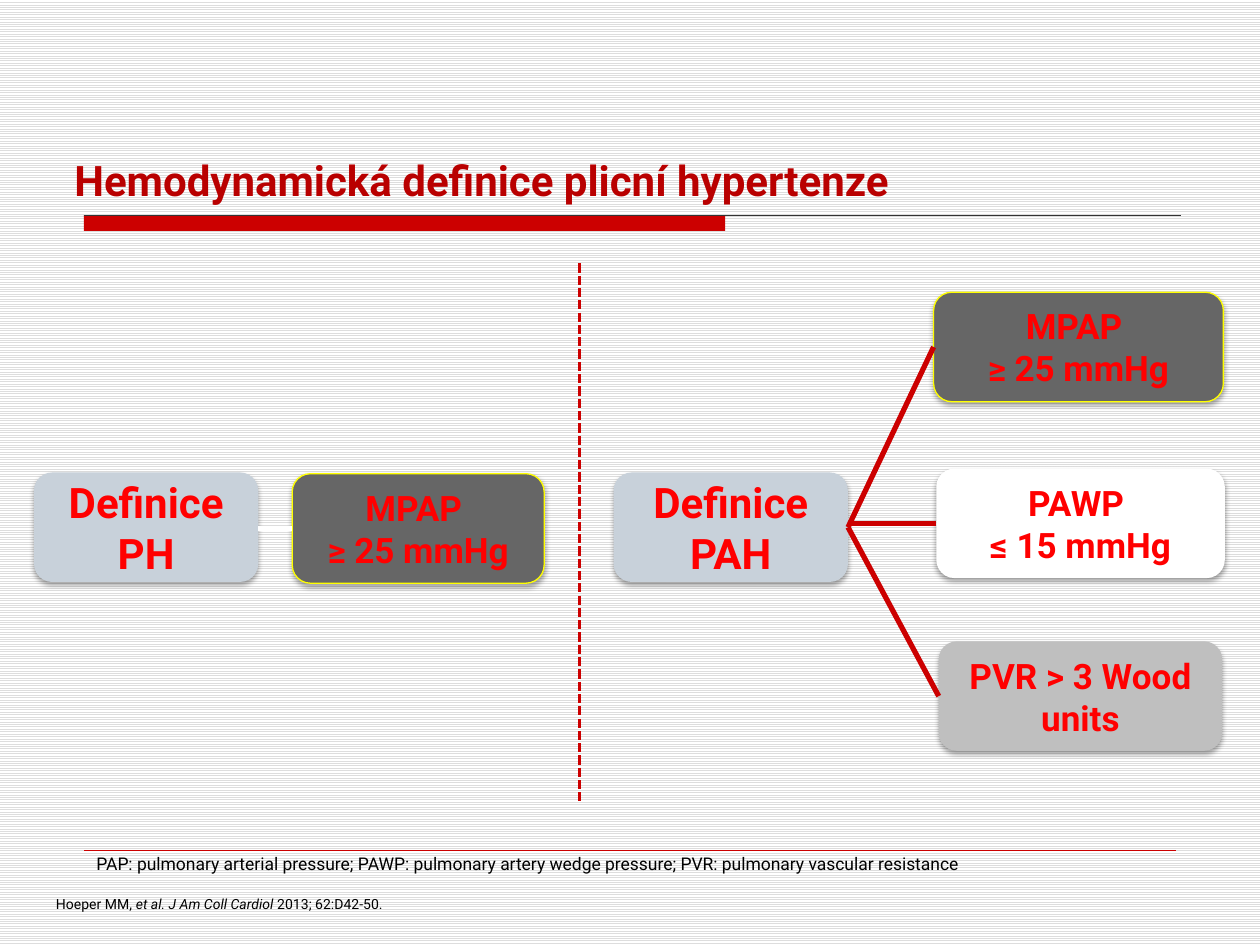
from lxml.etree import SubElement
from pptx import Presentation
from pptx.dml.color import RGBColor
from pptx.enum.dml import MSO_LINE, MSO_PATTERN
from pptx.enum.shapes import MSO_CONNECTOR, MSO_SHAPE
from pptx.enum.text import MSO_ANCHOR, MSO_AUTO_SIZE, PP_ALIGN
from pptx.oxml.ns import qn
from pptx.util import Pt

# Content
FONT = "Roboto"
RED, TEXT_RED, YELLOW = "CC0000", "FF0000", "FFFF00"
TITLE = "Hemodynamická definice plicní hypertenze"
ABBREVIATIONS = ("PAP: pulmonary arterial pressure; PAWP: pulmonary artery wedge "
                 "pressure; PVR: pulmonary vascular resistance")
# Citation runs: text, italic
CITATION = [("Hoeper MM, ", False), ("et al. J Am Coll Cardiol ", True),
            ("2013; 62:D42-50.", False)]

BOX_HEIGHT = 62.6
ROUND, PROCESS = MSO_SHAPE.ROUNDED_RECTANGLE, MSO_SHAPE.FLOWCHART_ALTERNATE_PROCESS
# name: text, preset, left, top, width, fill, outline, size, inset
BOXES = {
    "PH": ("Definice PH", ROUND, 19.4, 270, 128.2, "C8D1DA", None, 24, 0),
    "PH pressure": ("MPAP \v≥ 25 mmHg", PROCESS, 167, 270.7, 144, "666666", YELLOW, 20, 7.2),
    "PAH": ("Definice PAH", ROUND, 350.6, 270, 134, "C8D1DA", None, 24, 0),
    "PAH pressure": ("MPAP \v≥ 25 mmHg", PROCESS, 533.5, 167, 165.6, "666666", YELLOW, 20, 7.2),
    "Wedge": ("PAWP \v≤ 15 mmHg", PROCESS, 535, 267.8, 164.9, "FFFFFF", None, 20, 7.2),
    "Resistance": ("PVR > 3 Wood units", PROCESS, 536.4, 366.5, 162, "BFBFBF", None, 20, 7.2),
}
# from, to, colour, kept level with the target
LINKS = [
    ("PH", "PH pressure", "FFFFFF", True),
    ("PAH", "PAH pressure", RED, False),
    ("PAH", "Wedge", RED, True),
    ("PAH", "Resistance", RED, False),
]


def color(value):
    return RGBColor.from_string(value)


def style(font, size, value, bold=False):
    font.name, font.size, font.bold = FONT, Pt(size), bold
    font.color.rgb = color(value)


def add_line(x1, y1, x2, y2, value, weight):
    line = slide.shapes.add_connector(MSO_CONNECTOR.STRAIGHT, Pt(x1), Pt(y1), Pt(x2), Pt(y2))
    line.line.color.rgb = color(value)
    line.line.width = Pt(weight)
    SubElement(line._element.spPr, qn("a:effectLst"))
    return line


def add_shadow(shape):
    effects = SubElement(shape._element.spPr, qn("a:effectLst"))
    shadow = SubElement(effects, qn("a:outerShdw"), blurRad=str(Pt(3.1)),
                        dist=str(Pt(1.8)), dir="5400000", rotWithShape="0")
    black = SubElement(shadow, qn("a:srgbClr"), val="000000")
    SubElement(black, qn("a:alpha"), val="35000")


def add_box(text, preset, left, top, width, fill, outline, size, inset):
    box = slide.shapes.add_shape(preset, Pt(left), Pt(top), Pt(width), Pt(BOX_HEIGHT))
    box.fill.solid()
    box.fill.fore_color.rgb = color(fill)
    if outline:
        box.line.color.rgb = color(outline)
        box.line.width = Pt(0.75)
    else:
        box.line.fill.background()
    add_shadow(box)
    frame = box.text_frame
    frame.word_wrap = True
    frame.vertical_anchor = MSO_ANCHOR.MIDDLE
    frame.margin_left = frame.margin_right = Pt(inset)
    frame.margin_top = frame.margin_bottom = 0
    para = frame.paragraphs[0]
    para.text = text
    para.alignment = PP_ALIGN.CENTER
    style(para.font, size, TEXT_RED, bold=True)
    return box


def add_text(left, top, width, height, wrap):
    box = slide.shapes.add_textbox(Pt(left), Pt(top), Pt(width), Pt(height))
    box.text_frame.word_wrap = wrap
    return box.text_frame.paragraphs[0]


# Page and striped background
deck = Presentation()
deck.slide_width, deck.slide_height = Pt(720), Pt(540)
slide = deck.slides.add_slide(deck.slide_layouts[5])
background = slide.background.fill
background.patterned()
background.pattern = MSO_PATTERN.LIGHT_HORIZONTAL
background.fore_color.rgb = color("DDDDDD")
background.back_color.rgb = color("FFFFFF")

# Title
title = slide.shapes.title
title.left, title.top, title.width, title.height = Pt(35.3), Pt(82.8), Pt(648), Pt(39.6)
title.text_frame.auto_size = MSO_AUTO_SIZE.NONE
title.text_frame.vertical_anchor = MSO_ANCHOR.MIDDLE
heading = title.text_frame.paragraphs[0]
heading.text = TITLE
heading.alignment = PP_ALIGN.LEFT
style(heading.font, 24, "B90000", bold=True)

# Title bar, rules and divider
bar = slide.shapes.add_shape(MSO_SHAPE.RECTANGLE, Pt(48), Pt(123), Pt(366.4), Pt(9))
bar.shadow.inherit = False
bar.fill.solid()
bar.fill.fore_color.rgb = color(RED)
bar.line.fill.background()
add_line(48, 123, 674.6, 123, "333333", 0.75)
add_line(48, 486, 672, 486, RED, 0.25)
divider = add_line(331.2, 150.5, 331.2, 458, RED, 1.75)
divider.line.dash_style = MSO_LINE.SQUARE_DOT

# Definition boxes and their links
boxes = {name: add_box(*details) for name, details in BOXES.items()}
for source, target, value, level in LINKS:
    start, end = boxes[source], boxes[target]
    y = (end.top + end.height / 2) / Pt(1)
    link = add_line((start.left + start.width) / Pt(1), y, end.left / Pt(1), y, value, 3)
    if not level:
        link.begin_connect(start, 3)
    link.end_connect(end, 1)

# Abbreviations and citation
note = add_text(48, 483.8, 584, 41, True)
note.text = ABBREVIATIONS
style(note.font, 10, "000000")

citation = add_text(19.4, 508.3, 206.6, 17.3, False)
citation.alignment = PP_ALIGN.RIGHT
for text, italic in CITATION:
    span = citation.add_run()
    span.text = text
    span.font.italic = italic
style(citation.font, 8, "000000")

deck.save("out.pptx")
